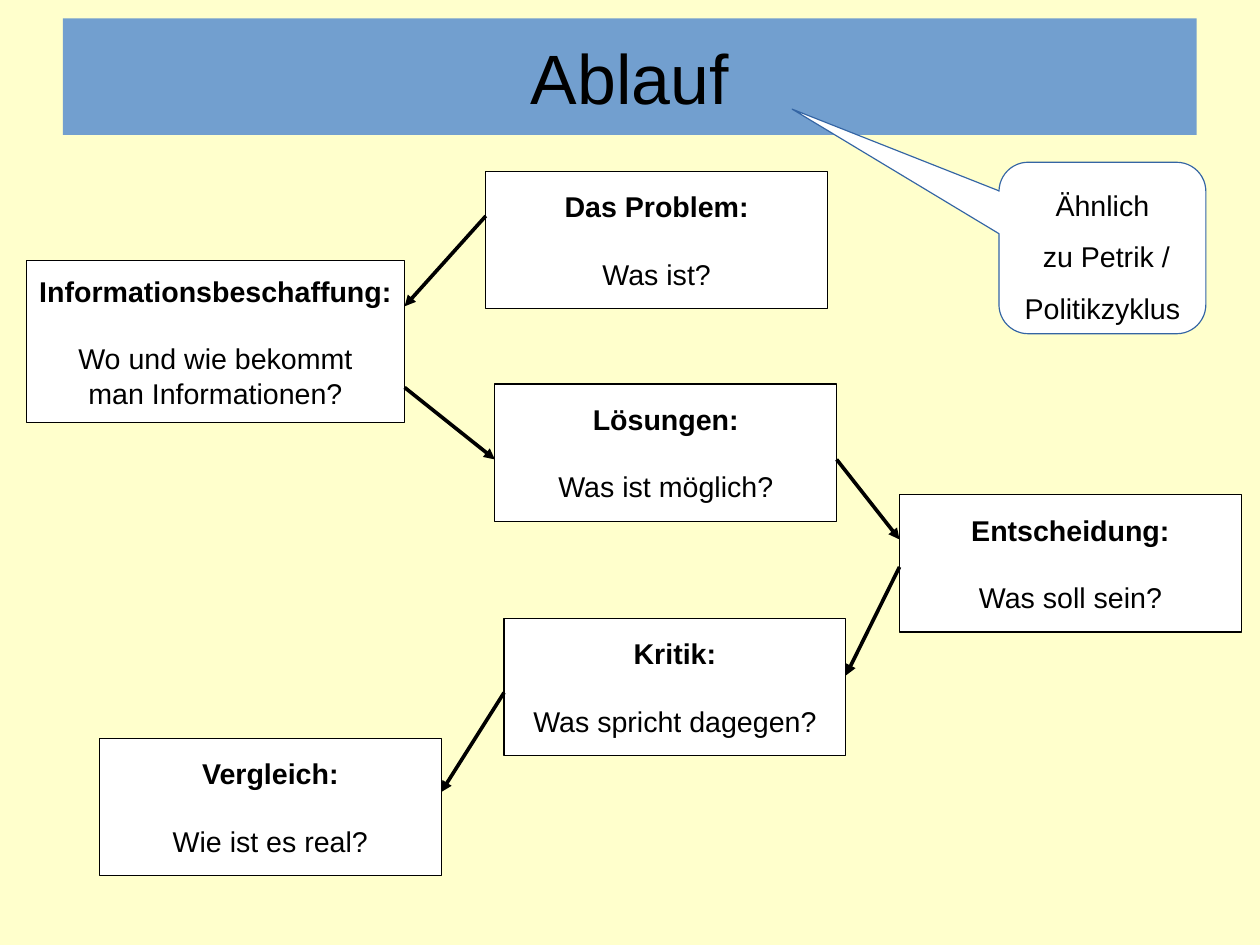
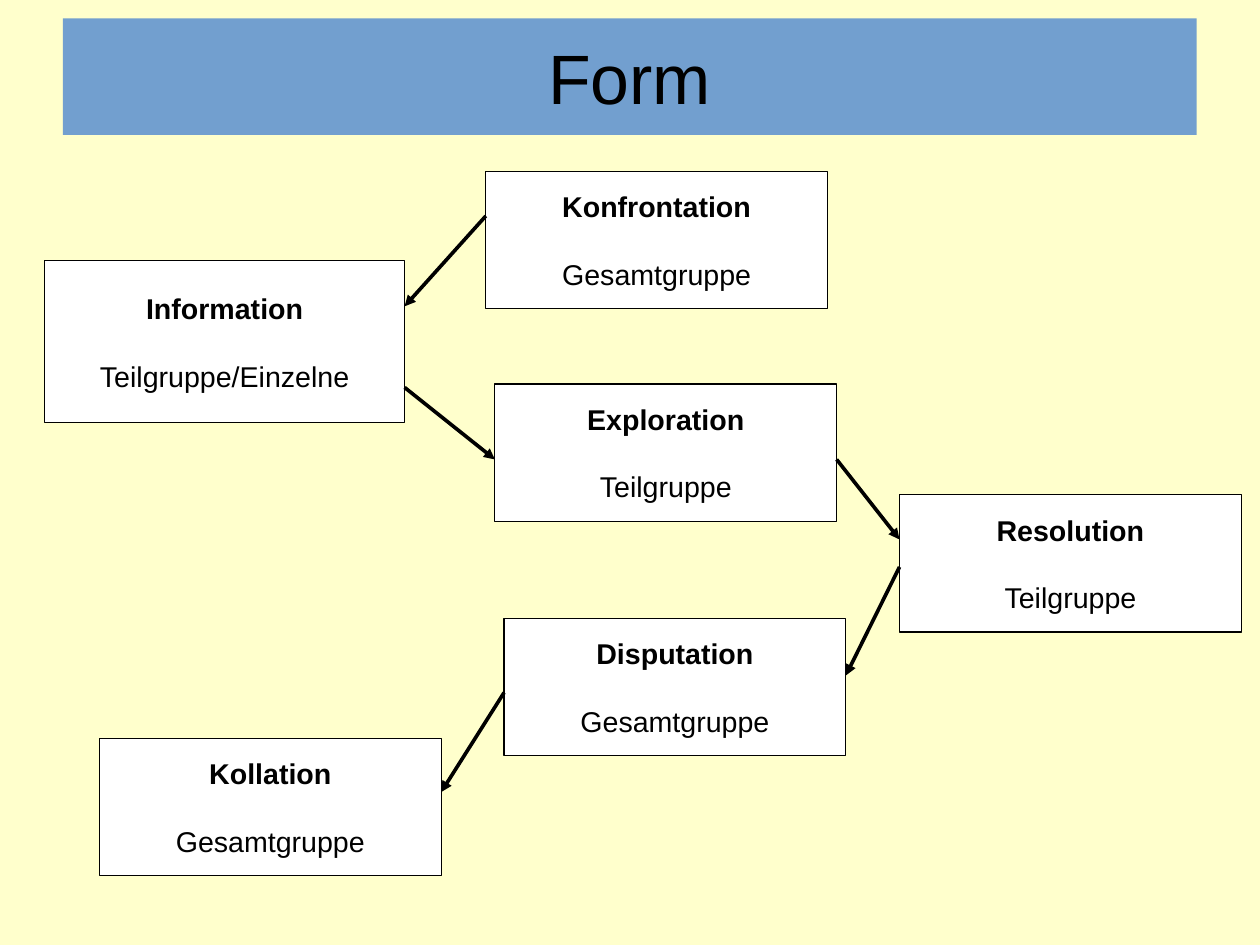
from itertools import pairwise

from pptx import Presentation
from pptx.dml.color import RGBColor
from pptx.enum import shapes, text
from pptx.oxml import ns
from pptx.util import Inches, Pt
from lxml import etree

CM_PER_INCH = 2.54
SLIDE_W, SLIDE_H = 28 / CM_PER_INCH, 21 / CM_PER_INCH
BLACK, WHITE, CREAM = "000000", "FFFFFF", "FFFFCC"
TITLE_BLUE, CALLOUT_BLUE = "729FCF", "3465A4"
FONT = "Arial"
TITLE_BOX = (0.55, 0.16, 9.92, 1.02)
BOX_W, BOX_H, INFO_H = 2.99, 1.2, 1.42
INFO_RIGHT = 3.54

# Left and top of the stations in flow order; the second hangs from INFO_RIGHT.
PLACES = [(4.25, 1.5), (None, 2.28), (4.33, 3.36), (7.87, 4.33), (4.41, 5.41), (0.87, 6.46)]
# Start and end height of the arrow from each station to the next.
ARROW_YS = [(1.89, 2.68), (3.39, 4.02), (4.02, 4.72), (4.96, 5.91), (6.06, 6.93)]

SLIDES = [
    {
        "title": "Ablauf",
        "info_width": 3.31,
        "stations": [
            ("Das Problem:", "Was ist?"),
            ("Informationsbeschaffung:", "Wo und wie bekommt", "man Informationen?"),
            ("Lösungen:", "Was ist möglich?"),
            ("Entscheidung:", "Was soll sein?"),
            ("Kritik:", "Was spricht dagegen?"),
            ("Vergleich:", "Wie ist es real?"),
        ],
        "callout": ("Ähnlich", " zu Petrik /", "Politikzyklus"),
    },
    {
        "title": "Form",
        "info_width": 3.15,
        "stations": [
            ("Konfrontation", "Gesamtgruppe"),
            ("Information", "Teilgruppe/Einzelne"),
            ("Exploration", "Teilgruppe"),
            ("Resolution", "Teilgruppe"),
            ("Disputation", "Gesamtgruppe"),
            ("Kollation", "Gesamtgruppe"),
        ],
    },
]


def paint(fill, colour):
    fill.solid()
    fill.fore_color.rgb = RGBColor.from_string(colour)


def write(tf, lines, size):
    """Fill a text frame with centred black lines, middle-anchored."""
    tf.text = "\n".join(lines)
    tf.auto_size = text.MSO_AUTO_SIZE.NONE
    tf.word_wrap = False
    tf.vertical_anchor = text.MSO_ANCHOR.MIDDLE
    for p in tf.paragraphs:
        p.alignment = text.PP_ALIGN.CENTER
        for r in p.runs:
            r.font.name, r.font.size, r.font.bold = FONT, Pt(size), False
            r.font.color.rgb = RGBColor.from_string(BLACK)


def add_title(slide, title):
    sp = slide.shapes.title
    sp.left, sp.top, sp.width, sp.height = map(Inches, TITLE_BOX)
    paint(sp.fill, TITLE_BLUE)
    tf = sp.text_frame
    write(tf, [title], 44)
    tf.margin_left = tf.margin_right = tf.margin_top = tf.margin_bottom = 0


def add_panel(slide, kind, box, lines, outline):
    sp = slide.shapes.add_shape(kind, *map(Inches, box))
    sp.shadow.inherit = False
    paint(sp.fill, WHITE)
    paint(sp.line.fill, outline)
    sp.line.width = Pt(0.75)
    write(sp.text_frame, lines, 18)
    return sp


def add_station(slide, box, lines):
    sp = add_panel(slide, shapes.MSO_SHAPE.RECTANGLE, box, lines, BLACK)
    heading = sp.text_frame.paragraphs[0]
    heading.runs[0].font.bold = True
    heading.space_after = Pt(21)


def add_arrow(slide, start, end):
    line = slide.shapes.add_connector(
        shapes.MSO_CONNECTOR.STRAIGHT, *map(Inches, (*start, *end)))
    paint(line.line.fill, BLACK)
    line.line.width = Pt(2.3)
    props = line.element.spPr
    etree.SubElement(props.find(ns.qn("a:ln")), ns.qn("a:tailEnd"), type="triangle")
    etree.SubElement(props, ns.qn("a:effectLst"))


def add_callout(slide, lines):
    sp = add_panel(slide, shapes.MSO_SHAPE.ROUNDED_RECTANGULAR_CALLOUT,
                   (8.74, 1.42, 1.81, 1.5), lines, CALLOUT_BLUE)
    for i, value in enumerate((-1.5, -0.81, 0.17)):
        sp.adjustments[i] = value
    for p in sp.text_frame.paragraphs:
        p.line_spacing = 1.5


def station_boxes(info_width):
    return [(INFO_RIGHT - info_width, top, info_width, INFO_H) if left is None
            else (left, top, BOX_W, BOX_H) for left, top in PLACES]


def add_flow(slide, content):
    boxes = station_boxes(content["info_width"])
    for box, lines in zip(boxes, content["stations"]):
        add_station(slide, box, lines)
    for (a, b), (y1, y2) in zip(pairwise(boxes), ARROW_YS):
        if b[0] < a[0]:
            x1, x2 = a[0], b[0] + b[2]
        else:
            x1, x2 = a[0] + a[2], b[0]
        add_arrow(slide, (x1, y1), (x2, y2))


def main():
    prs = Presentation()
    prs.slide_width, prs.slide_height = Inches(SLIDE_W), Inches(SLIDE_H)
    paint(prs.slide_master.background.fill, CREAM)
    for content in SLIDES:
        slide = prs.slides.add_slide(prs.slide_layouts.get_by_name("Title Only"))
        add_title(slide, content["title"])
        add_flow(slide, content)
        if "callout" in content:
            add_callout(slide, content["callout"])
    prs.save("out.pptx")


if __name__ == "__main__":
    main()
